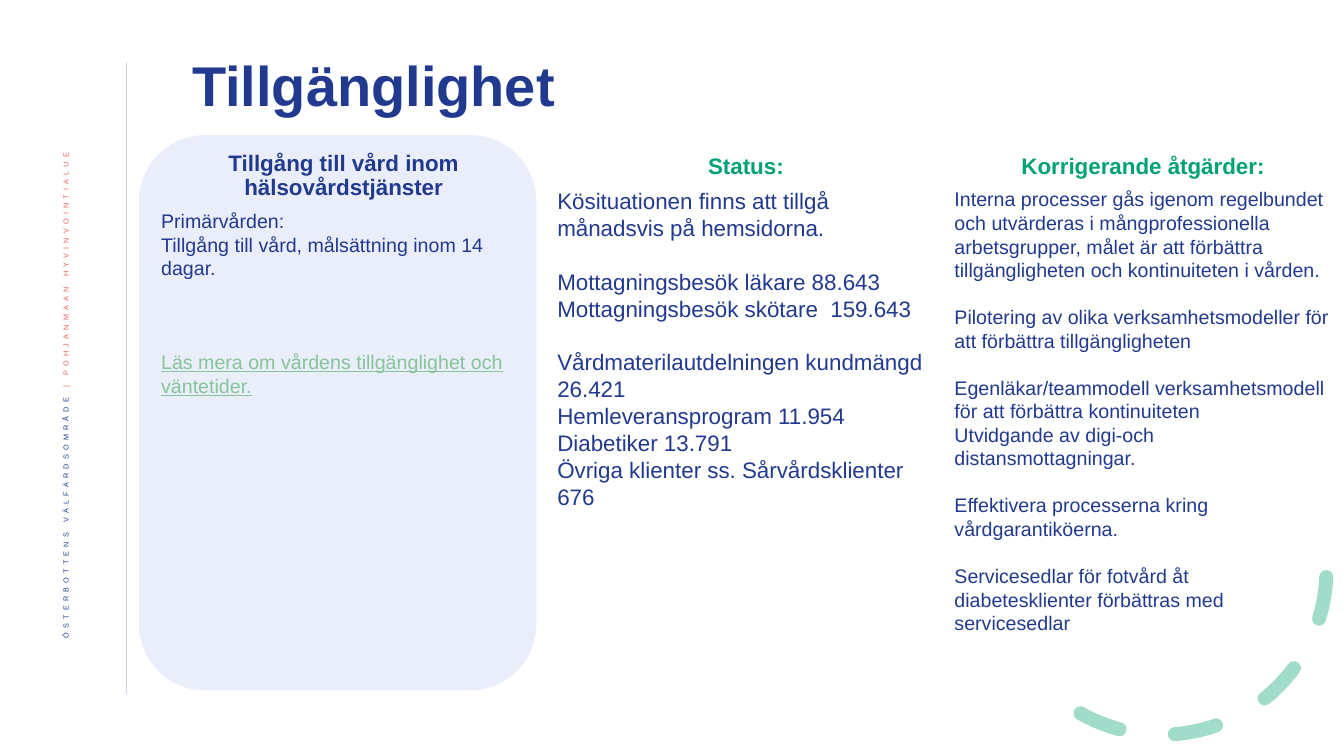
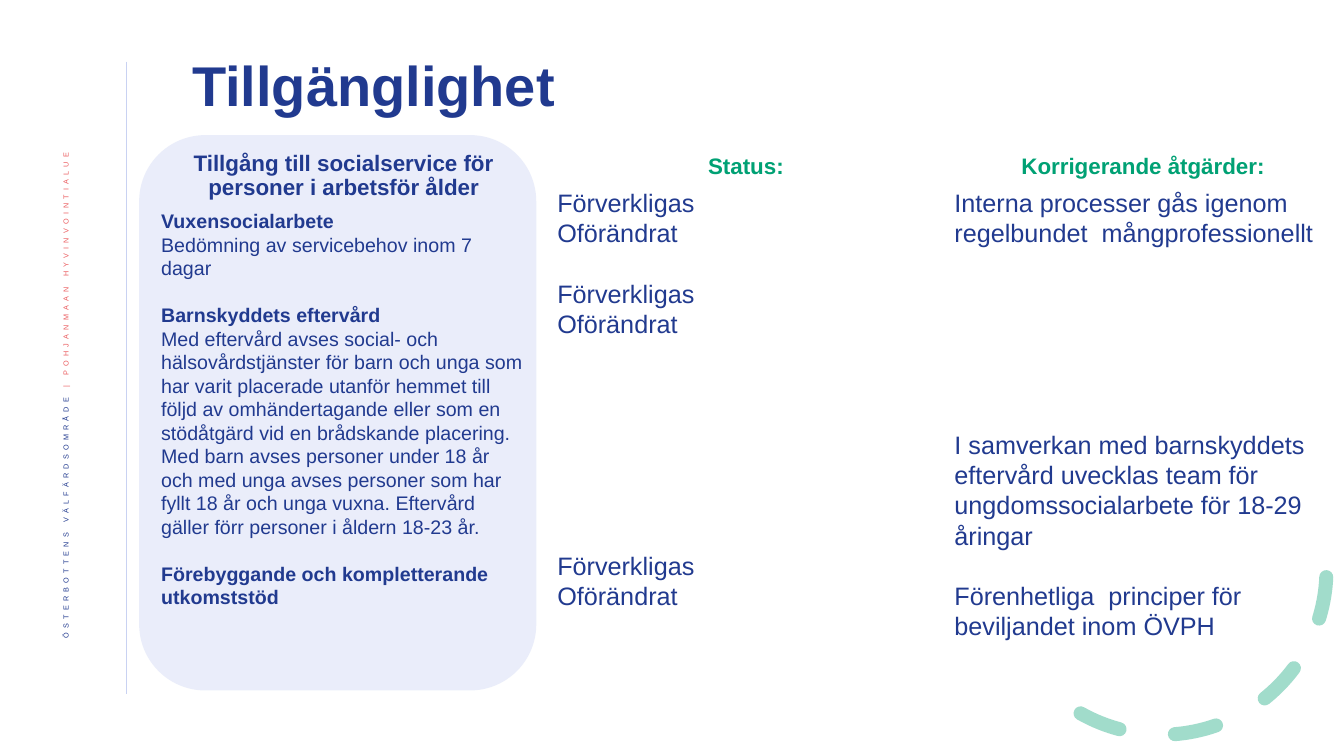
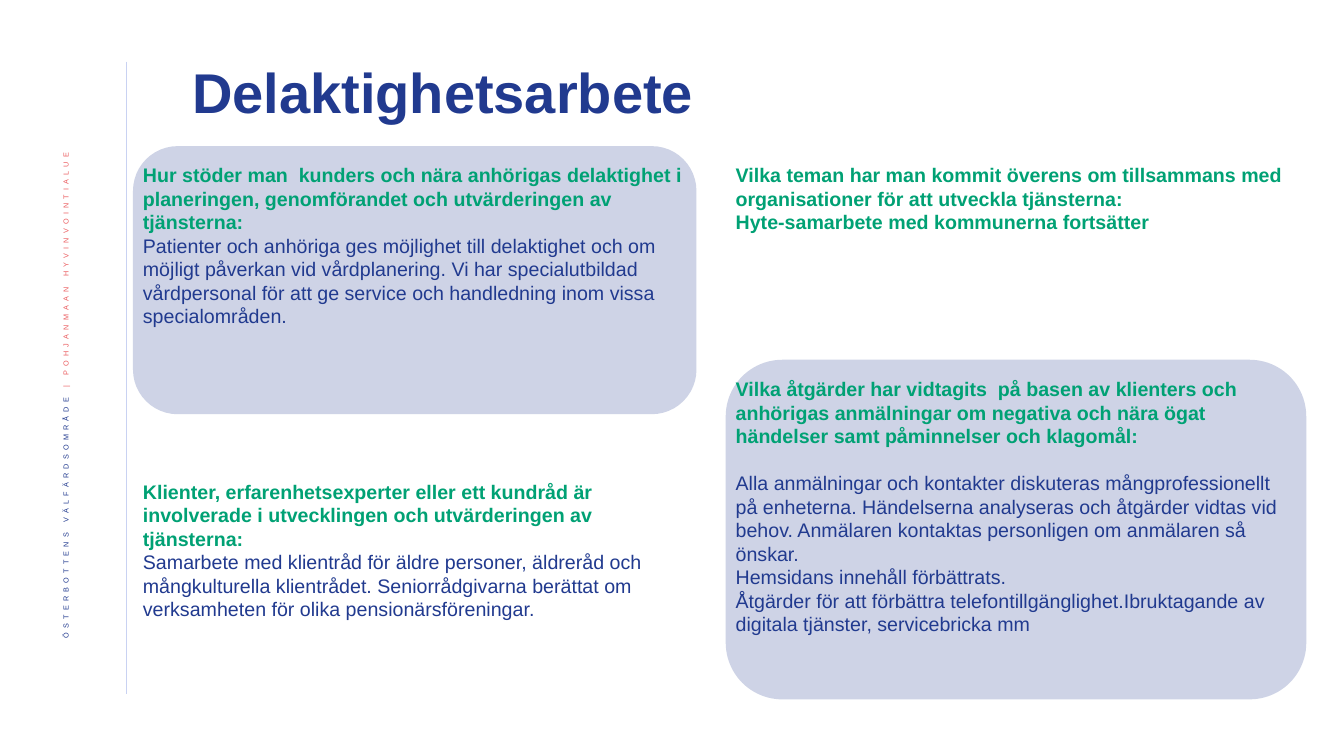
from collections import namedtuple
from dataclasses import dataclass

from lxml.etree import SubElement
from pptx import Presentation
from pptx.dml.color import RGBColor
from pptx.enum.dml import MSO_LINE
from pptx.enum.shapes import MSO_CONNECTOR, MSO_SHAPE as SHAPE
from pptx.enum.text import MSO_ANCHOR as ANCHOR, PP_ALIGN as ALIGN
from pptx.oxml.ns import qn
from pptx.util import Pt


@dataclass(frozen=True)
class Theme:
    font: str = "Arial"
    navy: str = "213A8F"
    green: str = "00A174"
    coral: str = "EB5C5F"
    pale: str = "C9D2F2"
    link: str = "85C598"
    title: int = 40
    heading: int = 16
    body: int = 14
    large: int = 18
    side: int = 9
    line_height: float = 1.2


THEME = Theme()

# gap counts the empty lines left above a paragraph
Para = namedtuple("Para", "text tone gap", defaults=("body", 0))

TONES = {  # colour, bold, underlined
    "body": (THEME.navy, False, False),
    "strong": (THEME.navy, True, False),
    "question": (THEME.green, True, False),
    "link": (THEME.link, False, True),
}

CARD = (99.4, 96.5, 283.7, 396.7)
COLUMN_TOP, COLUMN_WIDTH = 105.1, 283.7
TOPIC_LEFT, STATUS_LEFT, ACTION_LEFT = 108, 391, 674.7


class Deck:
    def __init__(self, theme):
        self.theme = theme
        self.show = Presentation()
        self.show.slide_width, self.show.slide_height = Pt(960), Pt(540)
        self.slide = None

    def new_slide(self, title, title_box):
        self.slide = self.show.slides.add_slide(self.show.slide_layouts[6])
        self.margin_rule()
        self.side_label()
        frame = self.frame(title_box, ANCHOR.MIDDLE)
        heading = frame.paragraphs[0]
        heading.text = title
        heading.line_spacing = 0.9
        self.style(heading.runs[0], self.theme.title, self.theme.navy, True)

    def frame(self, box, anchor=ANCHOR.TOP):
        frame = self.slide.shapes.add_textbox(*map(Pt, box)).text_frame
        frame.word_wrap = True
        frame.vertical_anchor = anchor
        return frame

    def style(self, run, size, colour, bold=False, underline=False):
        font = run.font
        font.name, font.size, font.bold = self.theme.font, Pt(size), bold
        font.color.rgb = RGBColor.from_string(colour)
        if underline:
            font.underline = True

    def fade(self, shape, percent):
        """Set the opacity of every colour in a shape's fill and line."""
        for colour in shape._element.spPr.iter(qn("a:srgbClr")):
            SubElement(colour, qn("a:alpha"), val=str(percent * 1000))

    def margin_rule(self):
        rule = self.slide.shapes.add_connector(
            MSO_CONNECTOR.STRAIGHT, Pt(90), Pt(44), Pt(90), Pt(495.4))
        rule.line.color.rgb = RGBColor.from_string(self.theme.pale)
        rule.line.width = Pt(0.5)
        SubElement(rule._element.spPr, qn("a:effectLst"))

    def side_label(self):
        frame = self.frame((30.2, 102.2, 37.4, 412.6), ANCHOR.MIDDLE)
        frame._txBody.bodyPr.set("vert", "vert270")
        label = frame.paragraphs[0]
        label.alignment, label.line_spacing = ALIGN.RIGHT, 0.9
        for text, colour in (("ÖSTERBOTTENS VÄLFÄRDSOMRÅDE ", self.theme.navy),
                             ("| POHJANMAAN HYVINVOINTIALUE", self.theme.coral)):
            run = label.add_run()
            run.text = text
            self.style(run, self.theme.side, colour)
            props = run.font._element
            props.set("baseline", "30000")
            props.set("spc", "300")

    def dashed_arc(self):
        arc = self.slide.shapes.add_shape(
            SHAPE.ARC, Pt(712), Pt(289.4), Pt(235.4), Pt(235.4))
        arc.shadow.inherit = False
        arc.adjustments[0], arc.adjustments[1] = 158.17, 17.81
        arc.rotation = 98.9
        arc.fill.background()
        arc.line.color.rgb = RGBColor.from_string(self.theme.green)
        arc.line.width = Pt(10)
        arc.line.dash_style = MSO_LINE.DASH
        arc._element.spPr.find(qn("a:ln")).set("cap", "rnd")
        self.fade(arc, 36)

    def card(self, box, colour, opacity):
        card = self.slide.shapes.add_shape(SHAPE.ROUNDED_RECTANGLE, *map(Pt, box))
        card.shadow.inherit = False
        card.fill.solid()
        card.fill.fore_color.rgb = RGBColor.from_string(colour)
        card.line.fill.background()
        self.fade(card, opacity)

    def text(self, box, paras, size, heading=None, heading_colour=None, heading_spacing=None):
        frame = self.frame(box)
        frame.text = "\n".join(([heading] if heading else []) + [p.text for p in paras])
        lines = list(frame.paragraphs)
        if heading:
            head = lines.pop(0)
            head.alignment, head.space_after = ALIGN.CENTER, Pt(6)
            if heading_spacing:
                head.line_spacing = heading_spacing
            self.style(head.runs[0], self.theme.heading, heading_colour, True)
        for line, para in zip(lines, paras):
            if para.gap:
                line.space_before = Pt(round(para.gap * size * self.theme.line_height, 2))
            self.style(line.runs[0], size, *TONES[para.tone])

    def access_slide(self, topic, topic_paras, status, status_size, actions, action_size):
        """Topic card on the left, status and corrective actions beside it."""
        theme = self.theme
        self.new_slide("Tillgänglighet", (130.3, 32.4, 734.4, 61.2))
        self.dashed_arc()
        self.card(CARD, theme.pale, 38)
        self.text((TOPIC_LEFT, COLUMN_TOP, 275, 353), topic_paras, theme.body,
                  topic, theme.navy, 0.9)
        for left, heading, paras, size in (
                (STATUS_LEFT, "Status:", status, status_size),
                (ACTION_LEFT, "Korrigerande åtgärder:", actions, action_size)):
            self.text((left, COLUMN_TOP, COLUMN_WIDTH, 360), paras, size,
                      heading, theme.green)

    def question(self, box, paras, card_box=None):
        if card_box:
            self.card(card_box, self.theme.navy, 22)
        self.text(box, paras, self.theme.body)


def main():
    deck = Deck(THEME)

    deck.access_slide(
        "Tillgång till vård inom hälsovårdstjänster",
        [Para("Primärvården:"),
         Para("Tillgång till vård, målsättning inom 14 dagar."),
         Para("Läs mera om vårdens tillgänglighet och väntetider.", "link", 3)],
        [Para("Kösituationen finns att tillgå månadsvis på hemsidorna."),
         Para("Mottagningsbesök läkare 88.643", gap=1),
         Para("Mottagningsbesök skötare  159.643"),
         Para("Vårdmaterilautdelningen kundmängd 26.421", gap=1),
         Para("Hemleveransprogram 11.954"),
         Para("Diabetiker 13.791"),
         Para("Övriga klienter ss. Sårvårdsklienter 676")],
        THEME.heading,
        [Para("Interna processer gås igenom regelbundet och utvärderas i "
              "mångprofessionella arbetsgrupper, målet är att förbättra "
              "tillgängligheten och kontinuiteten i vården."),
         Para("Pilotering av olika verksamhetsmodeller för att förbättra "
              "tillgängligheten", gap=1),
         Para("Egenläkar/teammodell verksamhetsmodell för att förbättra "
              "kontinuiteten", gap=1),
         Para("Utvidgande av digi-och distansmottagningar."),
         Para("Effektivera processerna kring vårdgarantiköerna.", gap=1),
         Para("Servicesedlar för fotvård åt diabetesklienter förbättras med "
              "servicesedlar", gap=1)],
        THEME.body)

    deck.access_slide(
        "Tillgång till socialservice för personer i arbetsför ålder",
        [Para("Vuxensocialarbete", "strong"),
         Para("Bedömning av servicebehov inom 7 dagar"),
         Para("Barnskyddets eftervård", "strong", 1),
         Para("Med eftervård avses social- och hälsovårdstjänster för barn och "
              "unga som har varit placerade utanför hemmet till följd av "
              "omhändertagande eller som en stödåtgärd vid en brådskande "
              "placering. Med barn avses personer under 18 år och med unga avses "
              "personer som har fyllt 18 år och unga vuxna. Eftervård gäller "
              "förr personer i åldern 18-23 år."),
         Para("Förebyggande och kompletterande utkomststöd", "strong", 1)],
        [Para(text, gap=gap) for first_gap in (0, 1, 7)
         for text, gap in (("Förverkligas", first_gap), ("Oförändrat", 0))],
        THEME.large,
        [Para("Interna processer gås igenom regelbundet  mångprofessionellt"),
         Para("I samverkan med barnskyddets eftervård uvecklas team "
              "för ungdomssocialarbete för 18-29 åringar", gap=6),
         Para("Förenhetliga  principer för beviljandet inom ÖVPH", gap=1)],
        THEME.large)

    deck.new_slide("Delaktighetsarbete", (130.3, 32.4, 718.6, 71.3))
    left, left_width = 95, 402.5
    right, right_width = 518.4, 414.7
    deck.question(
        (left, 113, left_width, 143.3),
        [Para("Hur stöder man  kunders och nära anhörigas delaktighet i "
              "planeringen, genomförandet och utvärderingen av tjänsterna:", "question"),
         Para("Patienter och anhöriga ges möjlighet till delaktighet och om "
              "möjligt påverkan vid vårdplanering. Vi har specialutbildad "
              "vårdpersonal för att ge service och handledning inom vissa "
              "specialområden.")],
        (left, 104.4, left_width, 191.5))
    deck.question(
        (right, 113, right_width, 58.3),
        [Para("Vilka teman har man kommit överens om tillsammans med "
              "organisationer för att utveckla tjänsterna:", "question"),
         Para("Hyte-samarbete med kommunerna fortsätter", "question")])
    deck.question(
        (left, 339.1, left_width, 126),
        [Para("Klienter, erfarenhetsexperter eller ett kundråd är involverade i "
              "utvecklingen och utvärderingen av tjänsterna:", "question"),
         Para("Samarbete med klientråd för äldre personer, äldreråd och "
              "mångkulturella klientrådet. Seniorrådgivarna berättat om "
              "verksamheten för olika pensionärsföreningar.")])
    deck.question(
        (right, 265.7, right_width, 211),
        [Para("Vilka åtgärder har vidtagits  på basen av klienters och anhörigas "
              "anmälningar om negativa och nära ögat händelser samt påminnelser "
              "och klagomål:", "question"),
         Para("Alla anmälningar och kontakter diskuteras mångprofessionellt på "
              "enheterna. Händelserna analyseras och åtgärder vidtas vid behov. "
              "Anmälaren kontaktas personligen om anmälaren så önskar.", gap=1),
         Para("Hemsidans innehåll förbättrats."),
         Para("Åtgärder för att förbättra telefontillgänglighet.Ibruktagande av "
              "digitala tjänster, servicebricka mm")],
        (right, 257, right_width, 242.6))

    deck.show.save("out.pptx")


if __name__ == "__main__":
    main()
